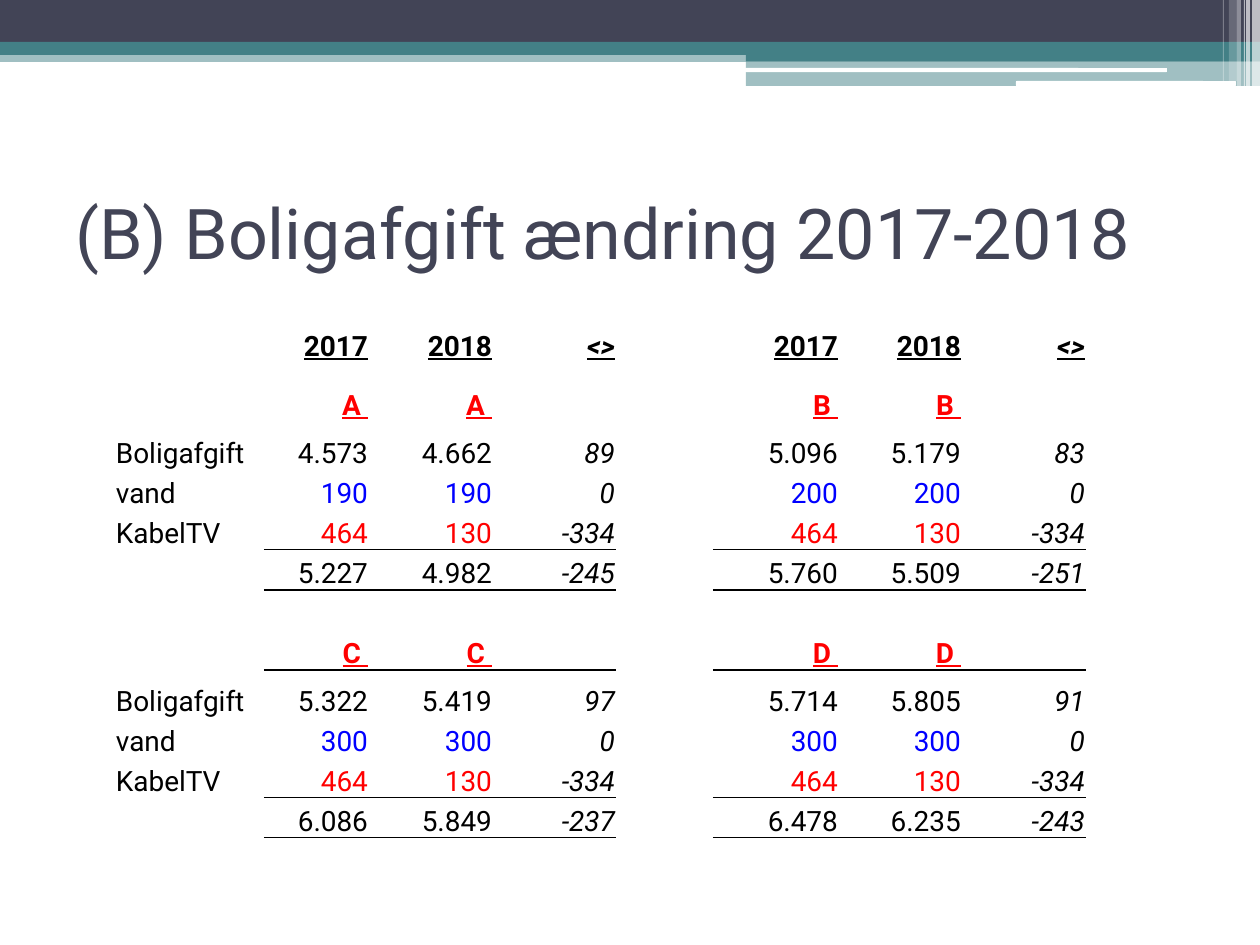
from lxml import etree
from pptx import Presentation
from pptx.dml.color import RGBColor
from pptx.enum.shapes import MSO_SHAPE
from pptx.enum.text import MSO_ANCHOR, PP_ALIGN
from pptx.oxml.ns import qn
from pptx.util import Pt

RECT, ROUND = MSO_SHAPE.RECTANGLE, MSO_SHAPE.ROUNDED_RECTANGLE
LEFT, RIGHT = PP_ALIGN.LEFT, PP_ALIGN.RIGHT
MIDDLE, BOTTOM = MSO_ANCHOR.MIDDLE, MSO_ANCHOR.BOTTOM
PX = 914400 / 126
FONT = "Roboto"
NO_STYLE = "{2D5ABB26-0587-4C30-8999-92F81FD0307C}"
COLORS = {"navy": "424456", "teal": "438086", "white": "FFFFFF",
          "black": "000000", "red": "FF0000", "blue": "0000FF"}

COL_WIDTHS = [149, 105, 124, 123, 97, 126, 123, 124]
BLOCK_HEIGHTS = [48, 40, 40, 40]
ROW_HEIGHTS = [40, 59, *BLOCK_HEIGHTS, 80, *BLOCK_HEIGHTS]
RULES = {4: 0.5, 5: 1, 9: 0.5, 10: 1}  # row: width of the line below, in points
GROUP_COLS = (1, 5)
LABELS = ["Boligafgift", "vand", "KabelTV", ""]
ROW_COLORS = ["black", "blue", "red", "black"]
# Each block of rows holds two home types: letter, then 2017, 2018 and change per row
BLOCKS = {
    1: [("A", [("4.573", "4.662", "89"), ("190", "190", "0"),
               ("464", "130", "-334"), ("5.227", "4.982", "-245")]),
        ("B", [("5.096", "5.179", "83"), ("200", "200", "0"),
               ("464", "130", "-334"), ("5.760", "5.509", "-251")])],
    6: [("C", [("5.322", "5.419", "97"), ("300", "300", "0"),
               ("464", "130", "-334"), ("6.086", "5.849", "-237")]),
        ("D", [("5.714", "5.805", "91"), ("300", "300", "0"),
               ("464", "130", "-334"), ("6.478", "6.235", "-243")])],
}


def px(n):
    return round(n * PX)


def add_text(tf, text, size=16, color="black", align=LEFT,
             bold=False, italic=False, underline=False):
    p = tf.paragraphs[0]
    p.alignment = align
    r = p.add_run()
    r.text = text
    f = r.font
    f.name, f.size = FONT, Pt(size)
    f.bold, f.italic, f.underline = bold, italic, underline
    f.color.rgb = RGBColor.from_string(COLORS[color])


def add_bar(s, kind, x, y, w, h, color, alpha=100):
    """Add a plain bar; alpha is its opacity in percent."""
    sp = s.shapes.add_shape(kind, px(x), px(y), px(w), px(h))
    sp.shadow.inherit = False
    sp.line.fill.background()
    sp.fill.solid()
    sp.fill.fore_color.rgb = RGBColor.from_string(COLORS[color])
    if alpha < 100:
        clr = sp.fill._xPr.find(".//" + qn("a:srgbClr"))
        etree.SubElement(clr, qn("a:alpha"), val=str(alpha * 1000))


def add_header(s, x, y, w):
    add_bar(s, RECT, x, y + 50, w, 12, "teal", 50)
    add_bar(s, RECT, x, y, w, 43, "navy")
    add_bar(s, RECT, x, y + 42, w, 13, "teal")
    add_bar(s, RECT, x + 746, y + 49, w - 746, 12, "teal")
    add_bar(s, RECT, x + 746, y + 61, w - 746, 25, "teal", 50)
    add_bar(s, ROUND, x + 745, y + 68, 422, 4, "white")
    add_bar(s, ROUND, x + 1016, y + 81, 220, 5, "white")
    stripes = [(8, 8, 86, 65), (14, 4, 86, 65), (16, 1, 86, 60),
               (23, 4, 86, 40), (31, 8, 81, 20), (37, 1, 81, 30)]
    for from_right, width, height, alpha in stripes:
        add_bar(s, RECT, x + w - from_right, y, width, height, "white", alpha)


def add_title(s, x, y, w, h, text):
    tf = s.shapes.add_textbox(px(x), px(y), px(w), px(h)).text_frame
    tf.word_wrap = True
    tf.vertical_anchor = MIDDLE
    add_text(tf, text, size=40, color="navy")


def add_border(cell, side, width):
    ln = etree.SubElement(cell._tc.get_or_add_tcPr(), qn(f"a:ln{side}"),
                          w=str(Pt(width)))
    fill = etree.SubElement(ln, qn("a:solidFill"))
    etree.SubElement(fill, qn("a:srgbClr"), val=COLORS["black"])


def format_cell(cell, row, in_group):
    cell.margin_left = cell.margin_right = cell.margin_top = px(1)
    cell.margin_bottom = 0
    cell.vertical_anchor = BOTTOM
    if in_group:
        for side, rule_row in (("T", row - 1), ("B", row)):
            if rule_row in RULES:
                add_border(cell, side, RULES[rule_row])
    cell.fill.background()
    if not cell.text_frame.text:
        # Keeps empty cells from stretching their row
        p = cell.text_frame.paragraphs[0]
        etree.SubElement(p._p, qn("a:endParaRPr"), sz="1600")


def fill_block(table, top, groups):
    """Write the labels, letters and figures of one block of rows."""
    for i, label in enumerate(LABELS, top + 1):
        if label:
            add_text(table.cell(i, 0).text_frame, label)
    for left, (letter, rows) in zip(GROUP_COLS, groups):
        for col in (left, left + 1):
            add_text(table.cell(top, col).text_frame, letter + " ", color="red",
                     align=RIGHT, bold=True, underline=True)
        for i, (values, color) in enumerate(zip(rows, ROW_COLORS), top + 1):
            for j, value in enumerate(values):
                change = j == 2
                add_text(table.cell(i, left + j).text_frame, value, align=RIGHT,
                         color="black" if change else color, italic=change)


def add_fee_table(s, x, y):
    table = s.shapes.add_table(
        len(ROW_HEIGHTS), len(COL_WIDTHS), px(x), px(y),
        px(sum(COL_WIDTHS)), px(sum(ROW_HEIGHTS))).table
    table.first_row = table.horz_banding = False
    table._tbl.tblPr.find(qn("a:tableStyleId")).text = NO_STYLE
    for col, width in zip(table.columns, COL_WIDTHS):
        col.width = px(width)
    for row, height in zip(table.rows, ROW_HEIGHTS):
        row.height = px(height)
    for left in GROUP_COLS:
        for j, head in enumerate(["2017", "2018", "<>"]):
            add_text(table.cell(0, left + j).text_frame, head, align=RIGHT,
                     bold=True, italic=j == 2, underline=True)
    for top, groups in BLOCKS.items():
        fill_block(table, top, groups)
    group_cols = {left + j for left in GROUP_COLS for j in range(3)}
    for i in range(len(ROW_HEIGHTS)):
        for j in range(len(COL_WIDTHS)):
            format_cell(table.cell(i, j), i, j in group_cols)


def main():
    prs = Presentation()
    prs.slide_width, prs.slide_height = px(1260), px(945)
    s = prs.slides.add_slide(prs.slide_layouts[6])
    add_header(s, 0, 0, 1260)
    add_title(s, 63, 158, 1134, 147, "(B) Boligafgift ændring 2017-2018")
    add_fee_table(s, 115, 323)
    prs.save("out.pptx")


if __name__ == "__main__":
    main()
